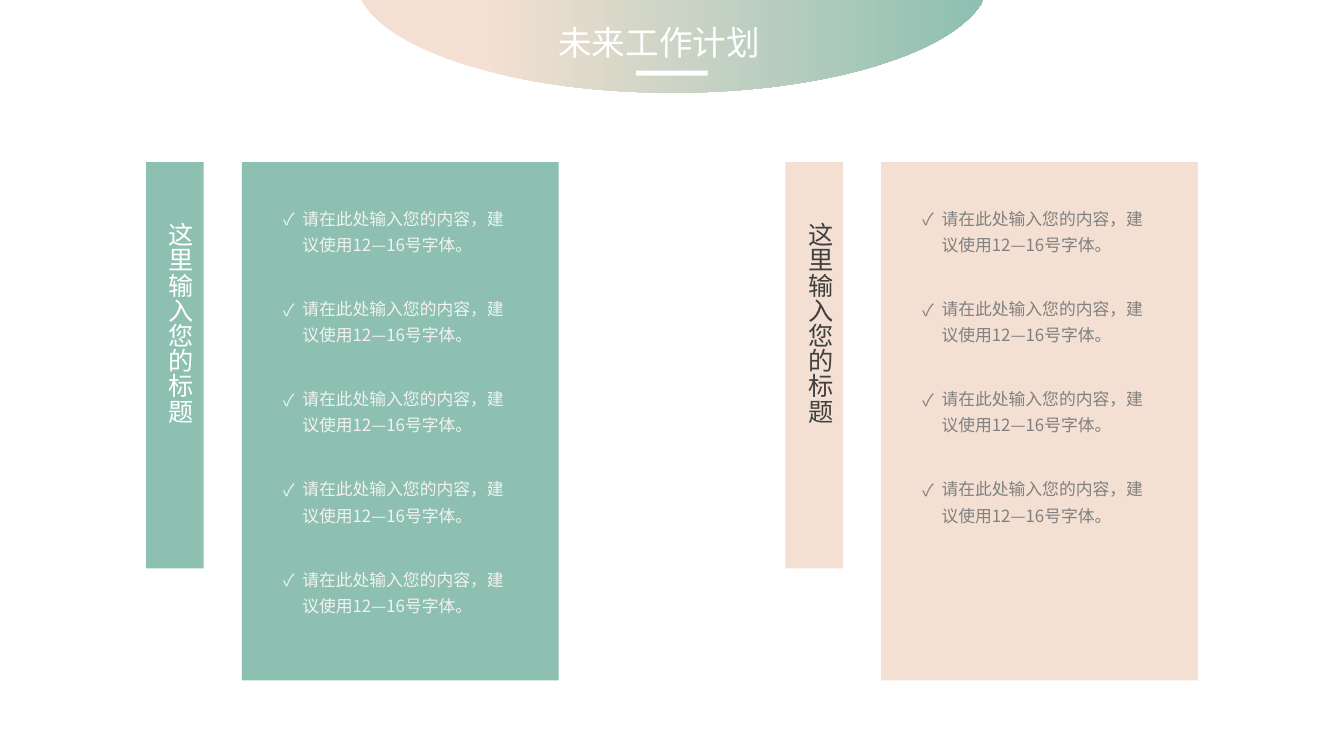
"""Builds the future work plan slide with two titled checklists."""
import lxml.etree
import pptx
import pptx.dml.color
import pptx.enum.shapes
import pptx.enum.text
import pptx.oxml.ns
import pptx.util

Inches = pptx.util.Inches
Pt = pptx.util.Pt
FONT = "Noto Sans CJK SC"
GREEN, PEACH, WHITE = "8DC0B1", "F3E0D2", "FFFFFF"
HEADING = "这里输入您的标题"
ITEM = "请在此处输入您的内容，建议使用12—16号字体。"
JUSTIFY = {"alignment": pptx.enum.text.PP_ALIGN.JUSTIFY}
FRAME_FORMAT = {
    "word_wrap": True,
    "auto_size": pptx.enum.text.MSO_AUTO_SIZE.SHAPE_TO_FIT_TEXT,
}
ITEM_TOP, ITEM_PITCH = 1.96, 3.58 / 4
CURVES = [
    [(9.75, 0.01), (9.45, 0.53), (8.19, 0.92), (6.67, 0.92)],
    [(6.67, 0.92), (5.15, 0.92), (3.88, 0.53), (3.59, 0.01)],
]


def rgb(value):
    """Return the colour of a hex string."""
    return pptx.dml.color.RGBColor.from_string(value)


def apply_format(target, values):
    """Set each named attribute on the target."""
    for name, value in values.items():
        setattr(target, name, value)


def add_child(parent, tag, **attributes):
    """Append a DrawingML element to the parent."""
    child = lxml.etree.SubElement(parent, pptx.oxml.ns.qn(tag))
    for name, value in attributes.items():
        child.set(name, value)


def add_block(slide, left, top, width, height, color):
    """Add a plain filled rectangle."""
    block = slide.shapes.add_shape(
        pptx.enum.shapes.MSO_SHAPE.RECTANGLE,
        Inches(left), Inches(top), Inches(width), Inches(height))
    block.shadow.inherit = False
    block.fill.solid()
    block.fill.fore_color.rgb = rgb(color)
    block.line.fill.background()


def add_text(slide, box, text, size, color, paragraph_format):
    """Add a one-paragraph text box and return its frame."""
    frame = slide.shapes.add_textbox(*map(Inches, box)).text_frame
    apply_format(frame, FRAME_FORMAT)
    paragraph = frame.paragraphs[0]
    apply_format(paragraph, paragraph_format)
    run = paragraph.add_run()
    run.text = text
    apply_format(run.font, {"size": Pt(size), "name": FONT})
    run.font.color.rgb = rgb(color)
    add_child(run.font._element, "a:ea", typeface=FONT)
    return frame


def add_vertical_heading(slide, left, color):
    """Add a heading that reads from top to bottom."""
    frame = add_text(slide, (left, 2.11, 0.5, 2.81), HEADING, 18, color, JUSTIFY)
    frame._txBody.bodyPr.set("vert", "eaVert")


def add_check_item(slide, left, top, color):
    """Add a list entry with a check mark."""
    frame = add_text(slide, (left, top, 2.53, 0.6), ITEM, 12, color,
                     {"line_spacing": 1.3})
    properties = frame.paragraphs[0]._p.get_or_add_pPr()
    properties.set("marL", str(Inches(0.19)))
    properties.set("indent", str(Inches(-0.19)))
    add_child(properties, "a:buFont", typeface=FONT)
    add_child(properties, "a:buChar", char="✓")


def add_plan(slide, left, fill, heading_color, item_color, count):
    """Add a heading bar and a panel of check items."""
    add_block(slide, left, 1.61, 0.57, 4.03, fill)
    add_block(slide, left + 0.95, 1.61, 3.14, 5.14, fill)
    add_vertical_heading(slide, left + 0.04, heading_color)
    for index in range(count):
        add_check_item(slide, left + 1.26, ITEM_TOP + index * ITEM_PITCH, item_color)


def curve_points(controls, steps=40):
    """Return points along a cubic curve, in lengths."""
    points = []
    for step in range(steps + 1):
        t = step / steps
        weights = ((1 - t) ** 3, 3 * t * (1 - t) ** 2, 3 * t * t * (1 - t), t ** 3)
        points.append(tuple(
            Inches(sum(w * value for w, value in zip(weights, axis)))
            for axis in zip(*controls)))
    return points


def add_banner(slide):
    """Add the curved gradient banner with the slide title."""
    outline = slide.shapes.build_freeform(Inches(3.58), 0)
    outline.add_line_segments([(Inches(9.75), 0)], close=False)
    for index, controls in enumerate(CURVES):
        outline.add_line_segments(curve_points(controls), close=index == 1)
    banner = outline.convert_to_shape()
    banner.shadow.inherit = False
    banner.line.fill.background()
    banner.fill.gradient()
    banner.fill.gradient_angle = 0
    stops = zip(banner.fill.gradient_stops, ((0.2, PEACH), (1, GREEN)))
    for stop, (position, color) in stops:
        stop.position = position
        stop.color.rgb = rgb(color)
    add_text(slide, (5.44, 0.17, 2.46, 0.5), "未来工作计划", 24, WHITE, JUSTIFY)
    add_block(slide, 6.31, 0.7, 0.71, 0.05, WHITE)


def main():
    """Build and save the slide."""
    deck = pptx.Presentation()
    apply_format(deck, {"slide_width": Inches(13.33), "slide_height": Inches(7.5)})
    slide = deck.slides.add_slide(deck.slide_layouts[6])
    add_plan(slide, 1.45, GREEN, WHITE, "F2F2F2", 5)
    add_plan(slide, 7.79, PEACH, "404040", "808080", 4)
    add_banner(slide)
    deck.save("out.pptx")


if __name__ == "__main__":
    main()
